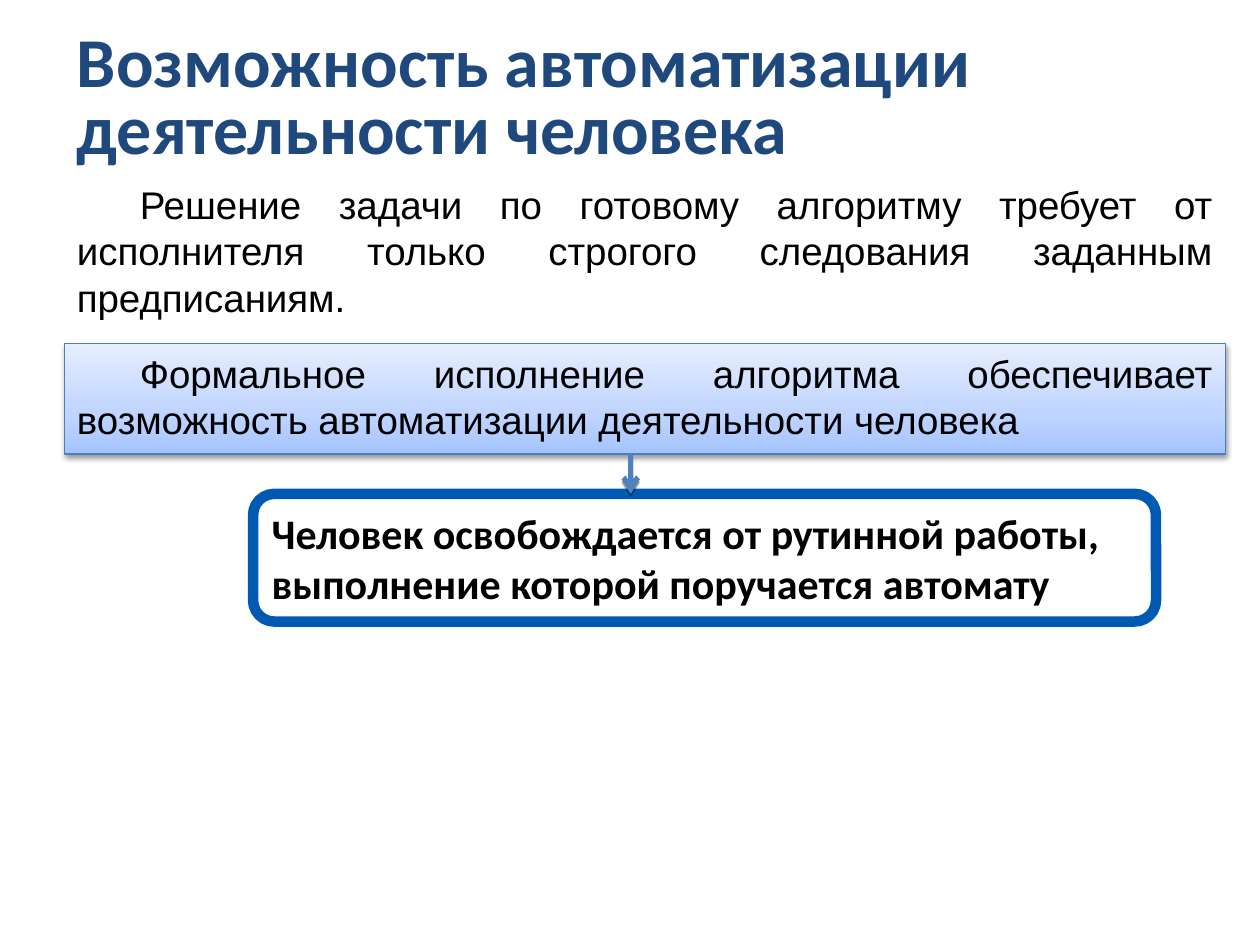
from lxml import etree
from pptx import Presentation
from pptx.dml.color import RGBColor
from pptx.enum import shapes, text
from pptx.oxml import ns
from pptx.util import Pt

NAVY = RGBColor(0x1F, 0x49, 0x7D)
BLACK = RGBColor(0, 0, 0)
STEEL = RGBColor(0x4B, 0x7E, 0xBC)
ARROW_BLUE = RGBColor(0x4F, 0x81, 0xBD)
FRAME_BLUE = RGBColor(0, 0x5A, 0xB4)
GRADIENT = [
    (0, RGBColor(0xA4, 0xC4, 0xFF)),
    (35, RGBColor(0xBF, 0xD4, 0xFF)),
    (100, RGBColor(0xE6, 0xEE, 0xFF)),
]

TITLE = ["Возможность автоматизации деятельности человека"]
INTRO = ["Решение задачи по готовому алгоритму требует от исполнителя только строгого следования заданным предписаниям."]
STATEMENT = ["Формальное исполнение алгоритма обеспечивает возможность автоматизации деятельности человека"]
RESULT = ["Человек освобождается от рутинной работы,", "выполнение которой поручается автомату"]

LEFT, BODY_WIDTH = 36.85, 663.3
STATEMENT_TOP, STATEMENT_HEIGHT = 196.4, 63
RESULT_TOP = 282.2
ARROW_X = 360.4

HEADING = {"name": "Calibri", "size": 40, "color": NAVY, "bold": True}
BODY = {"name": "Arial", "size": 22, "color": BLACK, "bold": False}
STRONG = {"name": "Calibri", "size": 24, "color": BLACK, "bold": True}


def add_child(parent, tag, **attributes):
    return etree.SubElement(parent, ns.qn(tag), attributes)


def write(shape, lines, style, anchor, wrap=True, justified=False, spacing=None):
    frame = shape.text_frame
    frame.word_wrap = wrap
    frame.vertical_anchor = anchor
    for index, line in enumerate(lines):
        paragraph = frame.add_paragraph() if index else frame.paragraphs[0]
        paragraph.alignment = text.PP_ALIGN.JUSTIFY if justified else text.PP_ALIGN.LEFT
        if spacing:
            paragraph.line_spacing = spacing
        if justified:
            properties = paragraph._p.get_or_add_pPr()
            properties.set("marL", "0")
            properties.set("indent", str(Pt(36)))
        run = paragraph.add_run()
        run.text = line
        run.font.name = style["name"]
        run.font.size = Pt(style["size"])
        run.font.bold = style["bold"]
        run.font.color.rgb = style["color"]


def add_shadow(properties, blur, distance, opacity):
    effects = properties.find(ns.qn("a:effectLst"))
    if effects is None:
        effects = add_child(properties, "a:effectLst")
    shadow = add_child(effects, "a:outerShdw", blurRad=str(Pt(blur)), dist=str(Pt(distance)),
                       dir="5400000", rotWithShape="0")
    color = add_child(shadow, "a:srgbClr", val=str(BLACK))
    add_child(color, "a:alpha", val=str(opacity * 1000))


def fill_gradient(shape, stops):
    shape.fill.gradient()
    shape.fill.gradient_angle = 90
    stop_list = shape._element.spPr.find(".//" + ns.qn("a:gsLst"))
    for stop in list(stop_list):
        stop_list.remove(stop)
    for position, color in stops:
        stop = add_child(stop_list, "a:gs", pos=str(position * 1000))
        add_child(stop, "a:srgbClr", val=str(color))


def add_box(slide, kind, bounds, color, width):
    shape = slide.shapes.add_shape(kind, *map(Pt, bounds))
    shape.shadow.inherit = False
    shape.line.color.rgb = color
    shape.line.width = Pt(width)
    return shape


def main():
    presentation = Presentation()
    presentation.slide_width, presentation.slide_height = Pt(720), Pt(540)
    slide = presentation.slides.add_slide(presentation.slide_layouts[6])
    top, middle = text.MSO_ANCHOR.TOP, text.MSO_ANCHOR.MIDDLE

    title = slide.shapes.add_textbox(Pt(LEFT), Pt(15), Pt(647.5), Pt(85))
    write(title, TITLE, HEADING, middle, spacing=0.8)

    intro = slide.shapes.add_textbox(Pt(LEFT), Pt(100), Pt(BODY_WIDTH), Pt(86.5))
    write(intro, INTRO, BODY, top, justified=True)

    statement = add_box(slide, shapes.MSO_SHAPE.RECTANGLE,
                        (LEFT, STATEMENT_TOP, BODY_WIDTH, STATEMENT_HEIGHT), STEEL, 0.75)
    fill_gradient(statement, GRADIENT)
    add_shadow(statement._element.spPr, 3.1, 1.6, 38)
    write(statement, STATEMENT, BODY, top, justified=True)

    result = add_box(slide, shapes.MSO_SHAPE.ROUNDED_RECTANGLE,
                     (144.6, RESULT_TOP, 516, 73), FRAME_BLUE, 6)
    result.fill.background()
    write(result, RESULT, STRONG, middle, wrap=False)

    arrow = slide.shapes.add_connector(shapes.MSO_CONNECTOR.STRAIGHT, Pt(ARROW_X),
                                       Pt(STATEMENT_TOP + STATEMENT_HEIGHT), Pt(ARROW_X), Pt(RESULT_TOP))
    arrow.line.color.rgb = ARROW_BLUE
    arrow.line.width = Pt(3)
    add_child(arrow.line._get_or_add_ln(), "a:tailEnd", type="arrow")
    add_shadow(arrow._element.spPr, 0, 1.8, 35)

    presentation.save("out.pptx")


if __name__ == "__main__":
    main()
